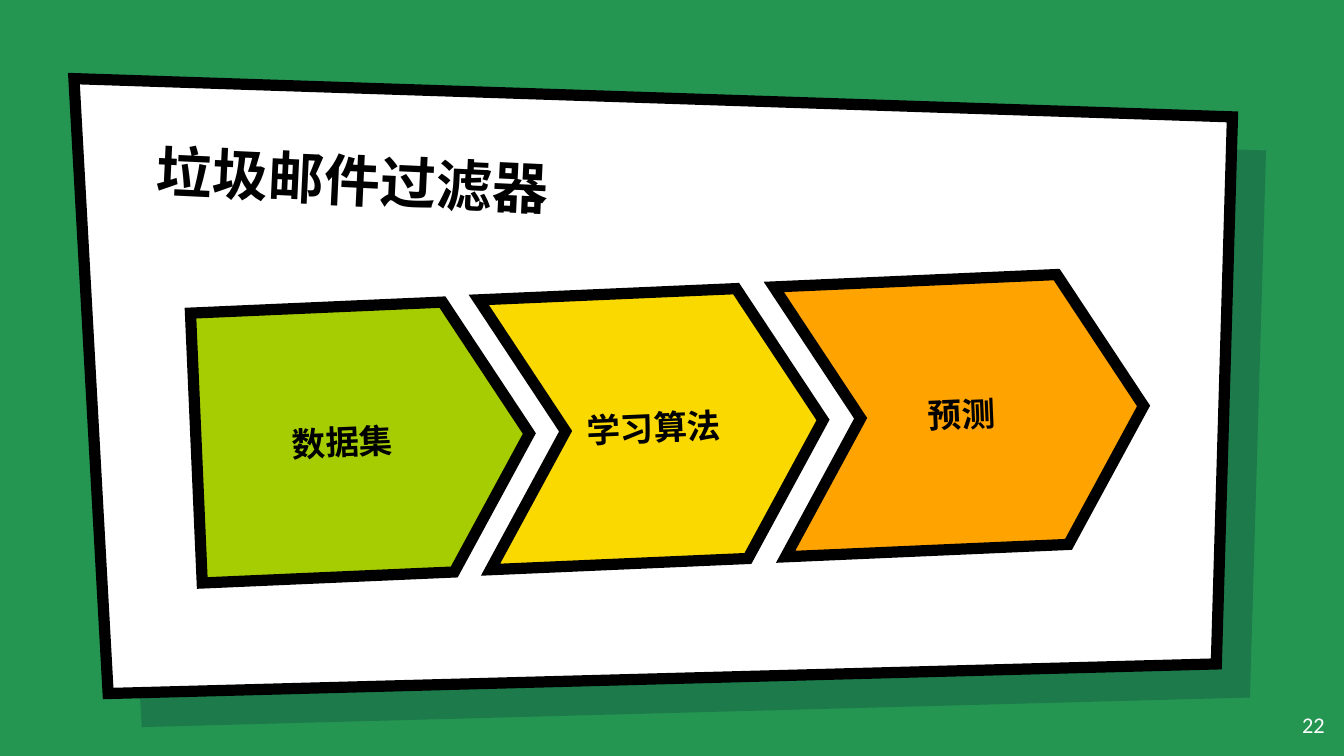
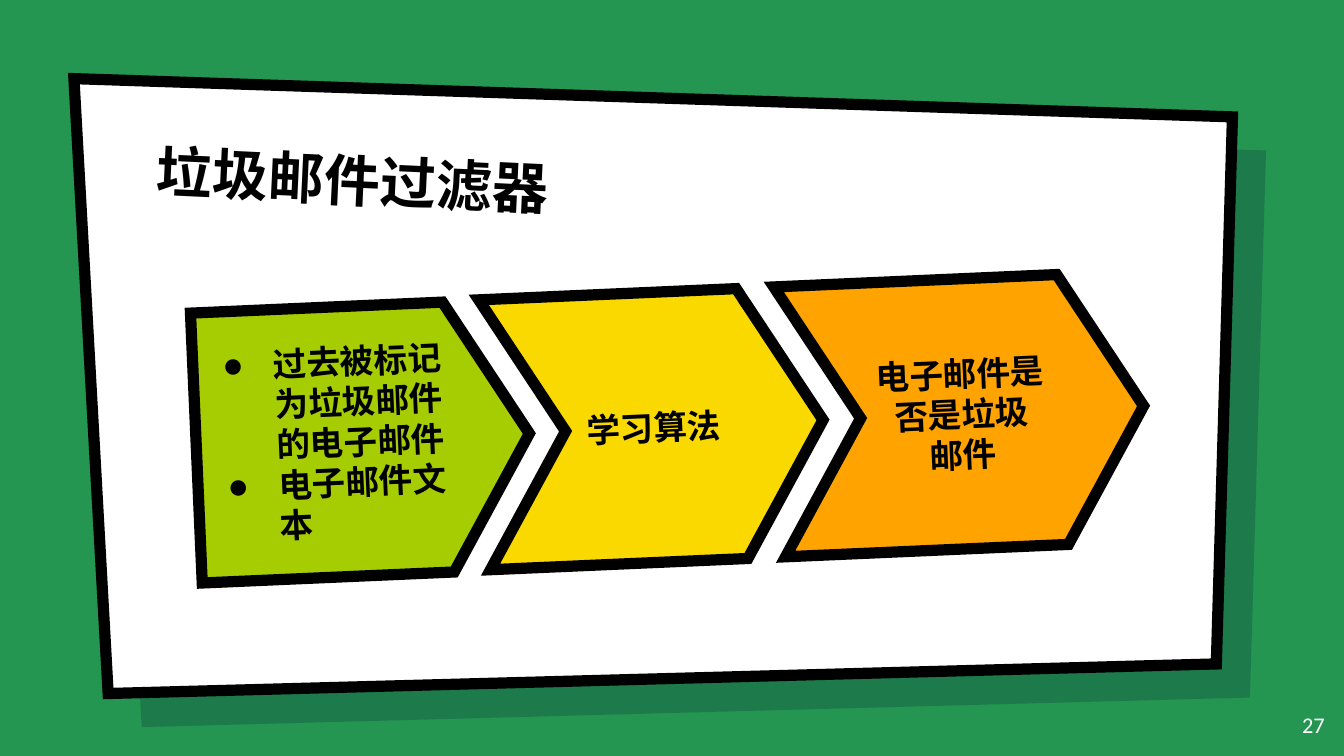
from dataclasses import dataclass

import lxml.etree
import pptx
import pptx.dml.color
import pptx.enum.shapes
import pptx.enum.text
import pptx.oxml.ns
import pptx.shapes.base
import pptx.slide
import pptx.text.text
import pptx.util

PX = 4572  # EMU in one px, 200 px to the inch
FONT = "Calibri"
GREEN, NAVY, WHITE, BLACK = "249651", "001936", "FFFFFF", "000000"
OUTLINE_POINTS = 6
TEXT_INSET = 20
CARD = ((110, 117), (1834, 174), (1810, 988), (161, 1032))
CARD_SHADOW_OFFSET = 50
STEP_TOP, STEP_RISE, STEP_HEIGHT = 455, 20, 402
STEP_ROTATION = 357.5
BULLET_INDENT, BULLET_HANGING = 100, 75

ALIGN = pptx.enum.text.PP_ALIGN
ANCHOR = pptx.enum.text.MSO_ANCHOR
PRESET = pptx.enum.shapes.MSO_SHAPE


@dataclass(frozen=True)
class TextStyle:
    size: int
    color: str
    bold: bool
    align: ALIGN
    anchor: ANCHOR
    bulleted: bool = False


@dataclass(frozen=True)
class Step:
    left: int
    width: int
    preset: PRESET
    adjustment: float
    fill: str


@dataclass(frozen=True)
class StepText:
    lines: tuple[str, ...]
    bulleted: bool = False


@dataclass(frozen=True)
class SlideContent:
    number: str
    texts: tuple[StepText, ...]


TITLE = "垃圾邮件过滤器"
STEPS = (
    Step(292, 496, PRESET.PENTAGON, 0.3, "A6CD02"),
    Step(721, 504, PRESET.CHEVRON, 0.3, "FAD900"),
    Step(1160, 542, PRESET.CHEVRON, 0.3, "FFA300"),
)
ALGORITHM = StepText(("学习算法",))
SLIDES = (
    SlideContent("22", (StepText(("数据集",)), ALGORITHM, StepText(("预测",)))),
    SlideContent("27", (
        StepText(("过去被标记为垃圾邮件的电子邮件", "电子邮件文本"), bulleted=True),
        ALGORITHM,
        StepText(("电子邮件是否是垃圾", "邮件")),
    )),
)

TITLE_STYLE = TextStyle(30, BLACK, True, ALIGN.LEFT, ANCHOR.BOTTOM)
STEP_STYLE = TextStyle(18, BLACK, True, ALIGN.CENTER, ANCHOR.MIDDLE)
BULLET_STYLE = TextStyle(18, BLACK, True, ALIGN.LEFT, ANCHOR.MIDDLE, bulleted=True)
NUMBER_STYLE = TextStyle(12, WHITE, False, ALIGN.RIGHT, ANCHOR.TOP)


def px(*lengths: int) -> list[pptx.util.Emu]:
    return [pptx.util.Emu(length * PX) for length in lengths]


def rgb(color: str) -> pptx.dml.color.RGBColor:
    return pptx.dml.color.RGBColor.from_string(color)


def add_element(parent: lxml.etree._Element, tag: str, **attributes: str) -> lxml.etree._Element:
    return lxml.etree.SubElement(parent, pptx.oxml.ns.qn(tag), attributes)


def apply_format(target: object, values: dict[str, object]) -> None:
    for name, value in values.items():
        setattr(target, name, value)


def fill_shape(shape: pptx.shapes.base.BaseShape, color: str, outlined: bool = True) -> None:
    """Give a flat fill and, if asked, the heavy black outline with sharp corners."""
    shape.shadow.inherit = False
    shape.fill.solid()
    shape.fill.fore_color.rgb = rgb(color)
    if not outlined:
        shape.line.fill.background()
        return
    shape.line.color.rgb = rgb(BLACK)
    shape.line.width = pptx.util.Pt(OUTLINE_POINTS)
    outline = shape.element.spPr.find(pptx.oxml.ns.qn("a:ln"))
    add_element(outline, "a:miter", lim="800000")


def add_bullet(paragraph: pptx.text.text._Paragraph) -> None:
    properties = paragraph._p.get_or_add_pPr()
    properties.set("marL", str(BULLET_INDENT * PX))
    properties.set("indent", str(-BULLET_HANGING * PX))
    add_element(add_element(properties, "a:buClr"), "a:srgbClr", val=BLACK)
    add_element(properties, "a:buFont", typeface=FONT)
    add_element(properties, "a:buChar", char="●")


def write_text(frame: pptx.text.text.TextFrame, lines: tuple[str, ...], style: TextStyle) -> None:
    inset, = px(TEXT_INSET)
    apply_format(frame, {
        "word_wrap": True,
        "vertical_anchor": style.anchor,
        "margin_left": inset,
        "margin_top": inset,
        "margin_right": inset,
        "margin_bottom": inset,
    })
    for index, line in enumerate(lines):
        paragraph = frame.add_paragraph() if index else frame.paragraphs[0]
        paragraph.alignment = style.align
        if style.bulleted:
            add_bullet(paragraph)
        run = paragraph.add_run()
        run.text = line
        apply_format(run.font, {
            "name": FONT,
            "size": pptx.util.Pt(style.size),
            "bold": style.bold,
        })
        run.font.color.rgb = rgb(style.color)


def add_card(slide: pptx.slide.Slide, offset: int) -> pptx.shapes.base.BaseShape:
    start, *corners = [(x + offset, y + offset) for x, y in CARD]
    builder = slide.shapes.build_freeform(*start, scale=PX)
    builder.add_line_segments(corners, close=True)
    return builder.convert_to_shape()


def add_background(slide: pptx.slide.Slide) -> None:
    slide.background.fill.solid()
    slide.background.fill.fore_color.rgb = rgb(GREEN)
    shadow = add_card(slide, CARD_SHADOW_OFFSET)
    fill_shape(shadow, NAVY, outlined=False)
    color = shadow.element.spPr.find(pptx.oxml.ns.qn("a:solidFill"))[0]
    add_element(color, "a:alpha", val="22000")
    fill_shape(add_card(slide, 0), WHITE)


def add_label(slide: pptx.slide.Slide, box: tuple[int, int, int, int], text: str,
              style: TextStyle, rotation: float = 0) -> None:
    label = slide.shapes.add_textbox(*px(*box))
    label.rotation = rotation
    write_text(label.text_frame, (text,), style)


def add_step(slide: pptx.slide.Slide, index: int, step: Step, text: StepText) -> None:
    top = STEP_TOP - index * STEP_RISE
    shape = slide.shapes.add_shape(step.preset, *px(step.left, top, step.width, STEP_HEIGHT))
    shape.adjustments[0] = step.adjustment
    shape.rotation = STEP_ROTATION
    fill_shape(shape, step.fill)
    write_text(shape.text_frame, text.lines, BULLET_STYLE if text.bulleted else STEP_STYLE)


def main() -> None:
    presentation = pptx.Presentation()
    presentation.slide_width, presentation.slide_height = px(2000, 1125)
    blank_layout = presentation.slide_layouts[6]
    for content in SLIDES:
        slide = presentation.slides.add_slide(blank_layout)
        add_background(slide)
        add_label(slide, (213, 192, 1538, 166), TITLE, TITLE_STYLE, rotation=2.7)
        for index, (step, text) in enumerate(zip(STEPS, content.texts)):
            add_step(slide, index, step, text)
        add_label(slide, (1871, 1039, 120, 86), content.number, NUMBER_STYLE)
    presentation.save("out.pptx")


if __name__ == "__main__":
    main()
